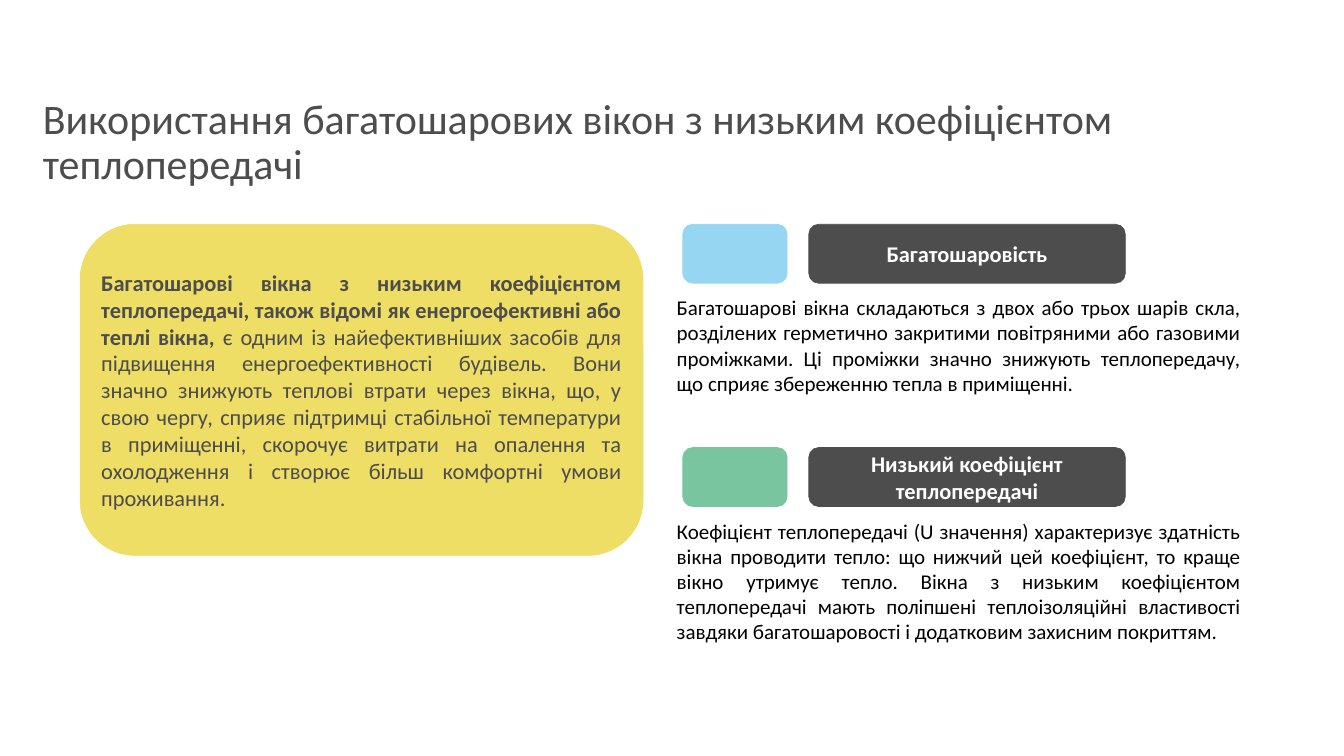
from pptx import Presentation
from pptx.dml.color import RGBColor
from pptx.enum.shapes import MSO_SHAPE
from pptx.enum.text import MSO_ANCHOR, MSO_AUTO_SIZE, PP_ALIGN
from pptx.util import Inches, Pt

ROUNDED = MSO_SHAPE.ROUNDED_RECTANGLE
TOP, MIDDLE = MSO_ANCHOR.TOP, MSO_ANCHOR.MIDDLE
LEFT, CENTER, JUSTIFY = PP_ALIGN.LEFT, PP_ALIGN.CENTER, PP_ALIGN.JUSTIFY
GROW, FIXED = MSO_AUTO_SIZE.SHAPE_TO_FIT_TEXT, MSO_AUTO_SIZE.NONE

GRAY = RGBColor(0x4D, 0x4D, 0x4D)
YELLOW = RGBColor(0xEE, 0xDE, 0x66)
BLUE = RGBColor(0x96, 0xD6, 0xF3)
GREEN = RGBColor(0x79, 0xC5, 0x9F)
WHITE = RGBColor(0xFF, 0xFF, 0xFF)
BLACK = RGBColor(0x00, 0x00, 0x00)

TITLE = "Використання багатошарових вікон з низьким коефіцієнтом теплопередачі"
SUMMARY_LEAD = (
    "Багатошарові вікна з низьким коефіцієнтом теплопередачі, також відомі як "
    "енергоефективні або теплі вікна, "
)
SUMMARY_REST = (
    "є одним із найефективніших засобів для підвищення енергоефективності будівель. "
    "Вони значно знижують теплові втрати через вікна, що, у свою чергу, сприяє "
    "підтримці стабільної температури в приміщенні, скорочує витрати на опалення та "
    "охолодження і створює більш комфортні умови проживання."
)
# Accent colour, heading, description, description height
FEATURES = [
    (
        BLUE,
        "Багатошаровість",
        "Багатошарові вікна складаються з двох або трьох шарів скла, розділених "
        "герметично закритими повітряними або газовими проміжками. Ці проміжки значно "
        "знижують теплопередачу, що сприяє збереженню тепла в приміщенні.",
        2.12,
    ),
    (
        GREEN,
        "Низький коефіцієнт теплопередачі",
        "Коефіцієнт теплопередачі (U значення) характеризує здатність вікна проводити "
        "тепло: що нижчий цей коефіцієнт, то краще вікно утримує тепло. Вікна з низьким "
        "коефіцієнтом теплопередачі мають поліпшені теплоізоляційні властивості завдяки "
        "багатошаровості і додатковим захисним покриттям.",
        2.63,
    ),
]
CONTENT_TOP = 4.45
FEATURE_PITCH = 4.43


def write(shape, runs, size, color, align, anchor=TOP, auto_size=FIXED, spacing=1.0):
    """Fill a shape with one paragraph of (text, bold) runs."""
    frame = shape.text_frame
    frame_format = {"word_wrap": True, "auto_size": auto_size, "vertical_anchor": anchor}
    for key, value in frame_format.items():
        setattr(frame, key, value)
    paragraph = frame.paragraphs[0]
    paragraph.alignment = align
    paragraph.line_spacing = spacing
    for text, bold in runs:
        run = paragraph.add_run()
        run.text = text
        run_format = {"name": "Calibri", "size": Pt(size), "bold": bold}
        for key, value in run_format.items():
            setattr(run.font, key, value)
        run.font.color.rgb = color


def add_card(slide, left, top, width, height, color):
    card = slide.shapes.add_shape(
        ROUNDED, Inches(left), Inches(top), Inches(width), Inches(height)
    )
    card.shadow.inherit = False
    card.fill.solid()
    card.fill.fore_color.rgb = color
    card.line.color.rgb = color
    card.line.width = Pt(1)
    return card


def add_text(slide, left, top, width, height):
    return slide.shapes.add_textbox(
        Inches(left), Inches(top), Inches(width), Inches(height)
    )


def add_title(slide, left, top, width, height):
    title = add_text(slide, left, top, width, height)
    write(title, [(TITLE, False)], 60, GRAY, LEFT, spacing=0.9)


def add_summary(slide, left, top, width, height):
    summary = add_card(slide, left, top, width, height, YELLOW)
    runs = [(SUMMARY_LEAD, True), (SUMMARY_REST, False)]
    write(summary, runs, 32, GRAY, JUSTIFY, MIDDLE)


def add_feature(slide, left, top, width, accent, heading, description, text_height):
    # Accent chip and heading bar
    add_card(slide, left + 0.22, top, 2.07, 1.17, accent)
    bar = add_card(slide, left + 2.72, top, 6.28, 1.17, GRAY)
    write(bar, [(heading, True)], 32, WHITE, CENTER, MIDDLE)
    # Description below
    body = add_text(slide, left, top + 1.35, width, text_height)
    write(body, [(description, False)], 30, BLACK, JUSTIFY, auto_size=GROW)


def main():
    prs = Presentation()
    prs.slide_width, prs.slide_height = Inches(26.67), Inches(15)
    slide = prs.slides.add_slide(prs.slide_layouts[6])
    add_title(slide, 0.75, 1.9, 24.92, 0.9)
    add_summary(slide, 1.59, CONTENT_TOP, 11.17, 6.57)
    for index, feature in enumerate(FEATURES):
        add_feature(slide, 13.33, CONTENT_TOP + index * FEATURE_PITCH, 11.39, *feature)
    prs.save("out.pptx")


if __name__ == "__main__":
    main()
